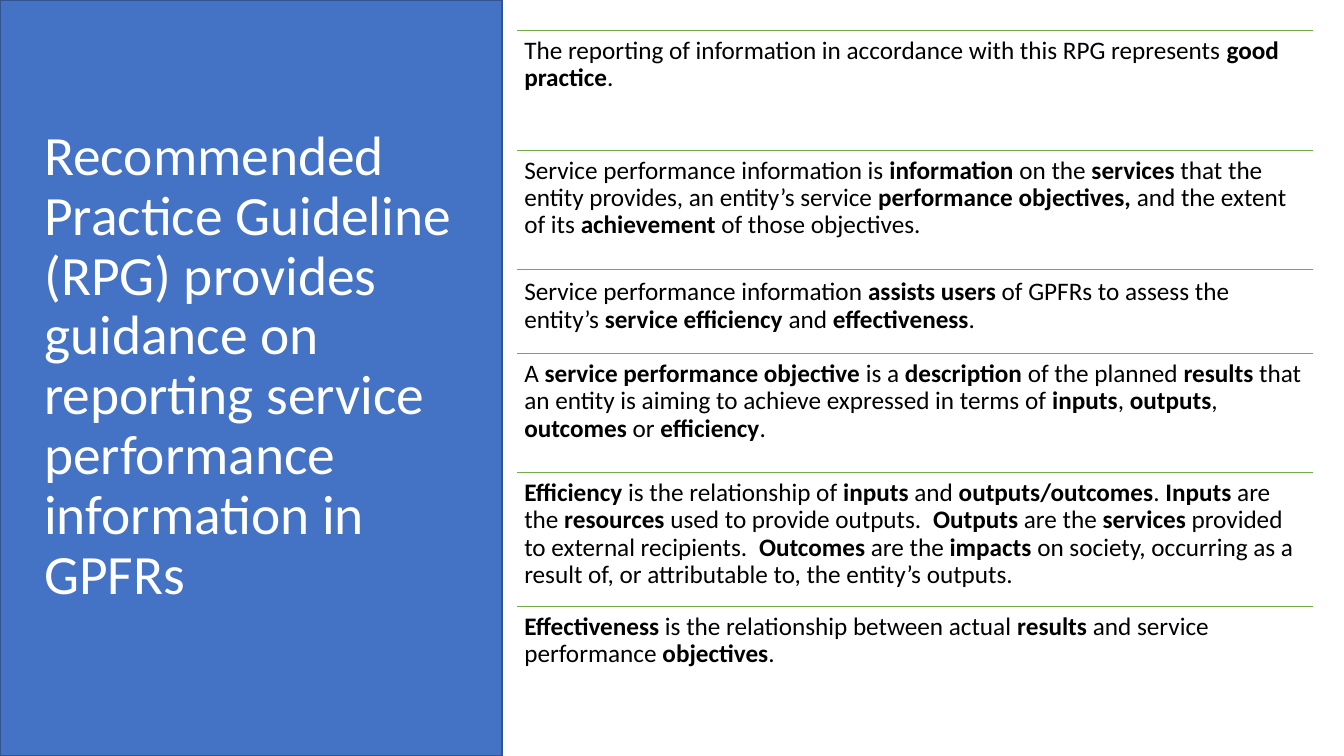
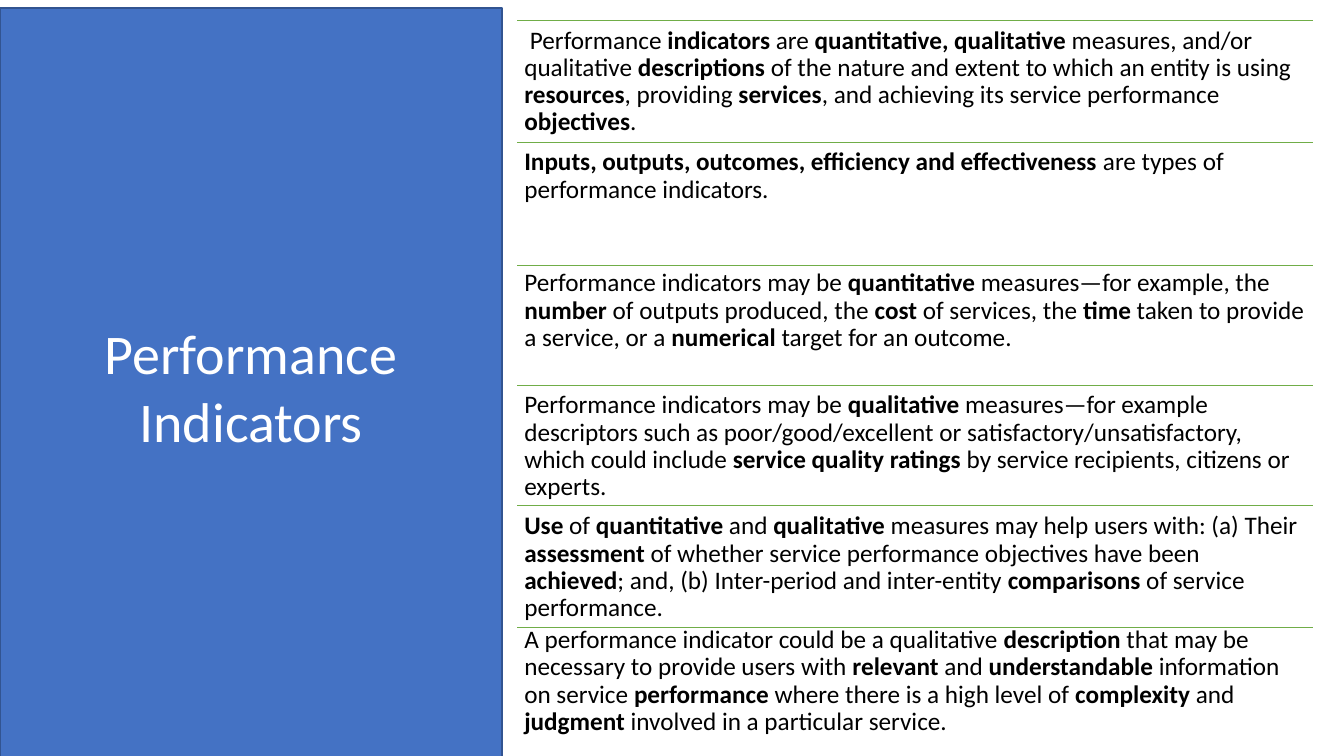
from itertools import accumulate

from lxml import etree
from pptx import Presentation
from pptx.dml.color import RGBColor
from pptx.enum.shapes import MSO_CONNECTOR as CONNECTOR, MSO_SHAPE as SHAPE
from pptx.enum.text import MSO_ANCHOR as ANCHOR, PP_ALIGN as ALIGN
from pptx.oxml import parse_xml
from pptx.oxml.ns import nsdecls, qn
from pptx.util import Inches, Pt

COLORS = {
    "panel": "4472C4",
    "panel_line": "325491",
    "title": "FFFFFF",
    "rule": "70AD47",
    "body": "000000",
    "shadow": "000000",
}
FONT = "Calibri"
PANEL_WIDTH = 4.98
ROW_LEFT, ROW_WIDTH, ROW_INSET = 5.13, 7.89, 0.07

# Each row: height, shift of the text below its rule, text with **bold** parts
GUIDELINE_ROWS = [
    (1.19, 0, "The reporting of information in accordance with this RPG represents "
              "**good practice**."),
    (1.18, 0, "Service performance information is **information** on the **services** "
              "that the entity provides, an entity’s service **performance objectives,** "
              "and the extent of its **achievement** of those objectives."),
    (0.84, 0.03, "Service performance information **assists users** of GPFRs to assess "
                 "the entity’s **service efficiency **and** effectiveness**."),
    (1.18, 0, "A **service performance objective **is a **description** of the planned "
              "**results** that an entity is aiming to achieve expressed in terms of "
              "**inputs**, **outputs**, **outcomes** or **efficiency**."),
    (1.33, 0, "**Efficiency** is the relationship of **inputs** and **outputs/outcomes**. "
              "**Inputs** are the **resources** used to provide outputs.  **Outputs** are "
              "the **services** provided to external recipients.  **Outcomes** are the "
              "**impacts** on society, occurring as a result of, or attributable to, the "
              "entity’s outputs."),
    (1.19, 0, "**Effectiveness** is the relationship between actual **results** and "
              "service performance **objectives**."),
]
INDICATOR_ROWS = [
    (1.21, 0, " Performance **indicators** are **quantitative, qualitative** measures, "
              "and/or qualitative **descriptions** of the nature and extent to which an "
              "entity is using **resources**, providing **services**, and achieving its "
              "service performance **objectives**."),
    (1.22, 0, "**Inputs, outputs, outcomes, efficiency and effectiveness **are types of "
              "performance indicators."),
    (1.19, -0.02, "Performance indicators may be **quantitative** measures—for example, "
                  "the **number** of outputs produced, the **cost** of services, the "
                  "**time** taken to provide a service, or a **numerical** target for an "
                  "outcome."),
    (1.2, 0, "Performance indicators may be **qualitative** measures—for example "
             "descriptors such as poor/good/excellent or satisfactory/unsatisfactory, "
             "which could include **service quality ratings** by service recipients, "
             "citizens or experts."),
    (1.21, 0, "**Use** of **quantitative** and **qualitative** measures may help users "
              "with: (a) Their **assessment** of whether service performance objectives "
              "have been **achieved**; and, (b) Inter-period and inter-entity "
              "**comparisons** of service performance."),
    (1.2, -0.08, "A performance indicator could be a qualitative **description** that may "
                 "be necessary to provide users with **relevant** and **understandable** "
                 "information on service **performance** where there is a high level of "
                 "**complexity** and **judgment** involved in a particular service."),
]


def rgb(name):
    return RGBColor.from_string(COLORS[name])


def set_font(font, size, color):
    font.name = FONT
    font.size = Pt(size)
    font.color.rgb = rgb(color)


def add_panel(s, top):
    panel = s.shapes.add_shape(SHAPE.RECTANGLE, 0, Inches(top),
                               Inches(PANEL_WIDTH), Inches(7.5))
    panel.shadow.inherit = False
    panel.fill.solid()
    panel.fill.fore_color.rgb = rgb("panel")
    panel.line.color.rgb = rgb("panel_line")
    panel.line.width = Pt(2)
    return panel


def set_title(sp, text, size, align, spacing):
    tf = sp.text_frame
    tf.word_wrap = True
    tf.vertical_anchor = ANCHOR.MIDDLE
    tf.text = text
    p = tf.paragraphs[0]
    p.alignment = align
    p.line_spacing = spacing
    set_font(p.runs[0].font, size, "title")


def add_rule(s, top):
    """Draw a thin line with a soft shadow straight below it."""
    rule = s.shapes.add_connector(CONNECTOR.STRAIGHT, Inches(ROW_LEFT), Inches(top),
                                  Inches(ROW_LEFT + ROW_WIDTH), Inches(top))
    rule.line.color.rgb = rgb("rule")
    rule.line.width = Pt(0.75)
    effects = parse_xml(f"<a:effectLst {nsdecls('a')}/>")
    shadow = etree.SubElement(effects, qn("a:outerShdw"), blurRad="40000",
                              dist="23000", dir="5400000", rotWithShape="0")
    color = etree.SubElement(shadow, qn("a:srgbClr"), val=COLORS["shadow"])
    etree.SubElement(color, qn("a:alpha"), val="35000")
    rule._element.spPr.append(effects)


def add_row_text(s, top, height, text):
    """Add one paragraph; parts between ** marks become bold."""
    box = s.shapes.add_textbox(Inches(ROW_LEFT), Inches(top),
                               Inches(ROW_WIDTH), Inches(height))
    tf = box.text_frame
    tf.word_wrap = True
    tf.margin_left = tf.margin_right = Inches(ROW_INSET)
    tf.margin_top = tf.margin_bottom = Inches(ROW_INSET)
    p = tf.paragraphs[0]
    p.line_spacing = 0.9
    for i, part in enumerate(text.split("**")):
        if part:
            r = p.add_run()
            r.text = part
            set_font(r.font, 18, "body")
            r.font.bold = i % 2 == 1


def add_rows(s, first_top, rows):
    tops = accumulate((height for height, _, _ in rows), initial=first_top)
    for top, (height, shift, text) in zip(tops, rows):
        add_rule(s, top)
        add_row_text(s, top + shift, height, text)


def add_guideline_slide(prs):
    s = prs.slides.add_slide(prs.slide_layouts[6])
    add_panel(s, 0)
    title = s.shapes.add_textbox(Inches(0.34), Inches(0.63), Inches(4.29), Inches(6.02))
    set_title(title, "Recommended Practice Guideline (RPG) provides guidance on reporting "
                     "service performance information in GPFRs", 39.6, ALIGN.LEFT, 0.9)
    add_rows(s, 0.3, GUIDELINE_ROWS)


def add_indicator_slide(prs):
    s = prs.slides.add_slide(prs.slide_layouts[6])
    panel = add_panel(s, 0.08)
    set_title(panel, "Performance Indicators", 40, ALIGN.CENTER, 1.0)
    add_rows(s, 0.2, INDICATOR_ROWS)


def main():
    prs = Presentation()
    prs.slide_width, prs.slide_height = Inches(13.33), Inches(7.5)
    add_guideline_slide(prs)
    add_indicator_slide(prs)
    prs.save("out.pptx")


if __name__ == "__main__":
    main()
